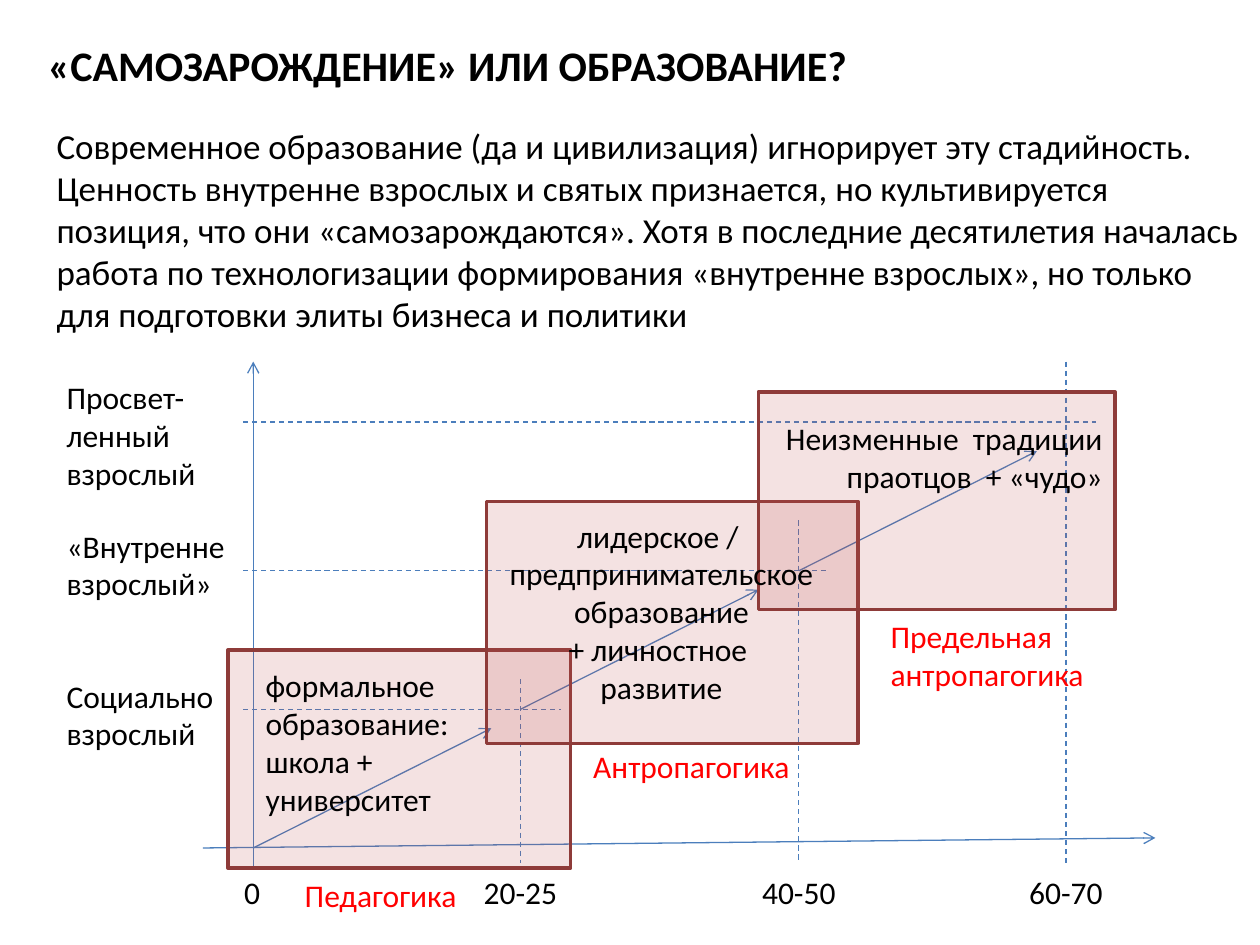
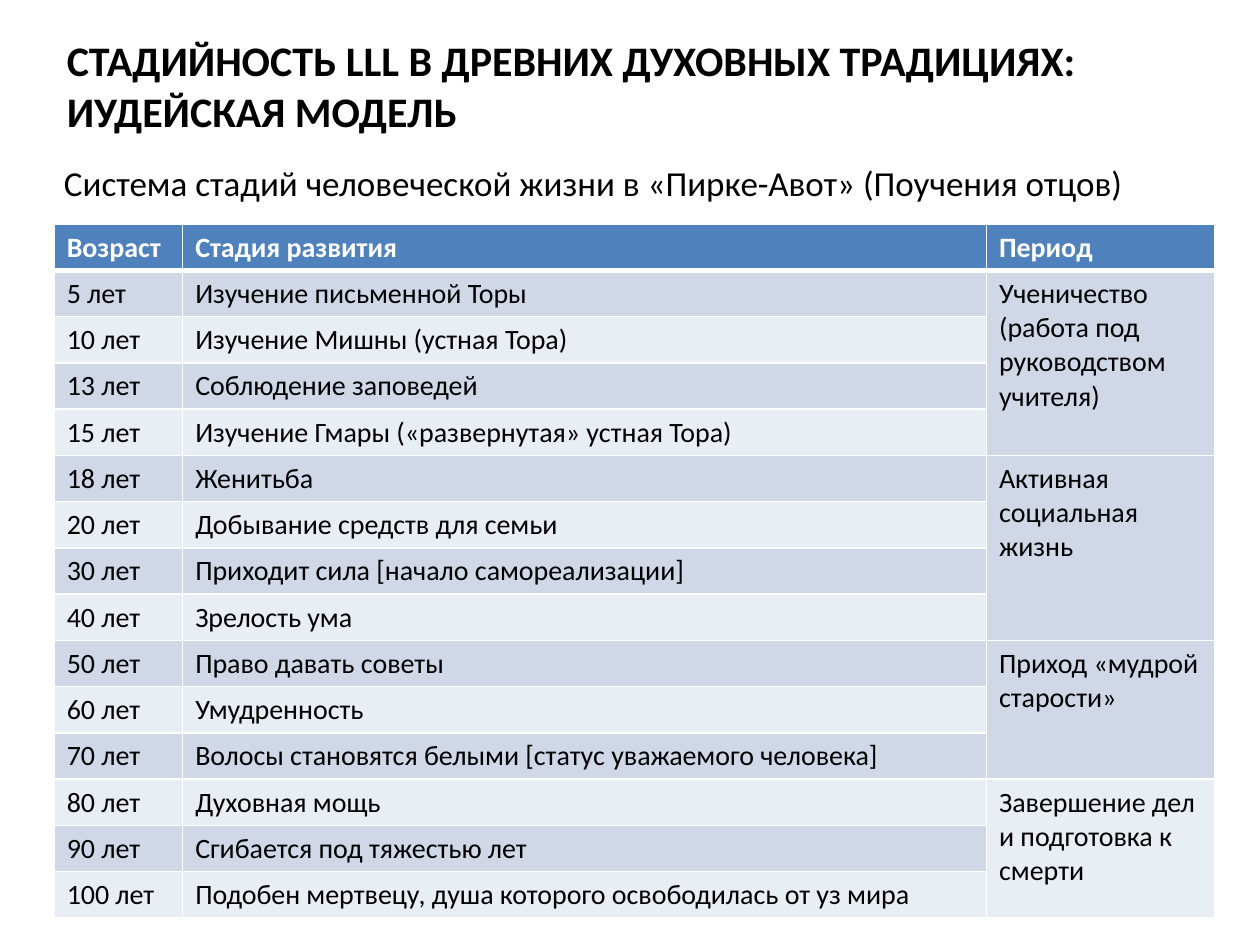
from lxml.etree import SubElement
from pptx import Presentation
from pptx.dml.color import RGBColor
from pptx.enum.dml import MSO_LINE
from pptx.enum.shapes import MSO_CONNECTOR, MSO_SHAPE
from pptx.enum.text import MSO_ANCHOR, PP_ALIGN
from pptx.oxml.ns import qn
from pptx.util import Inches, Pt

FONT = "Calibri"
BLACK, WHITE, RED = "000000", "FFFFFF", "FF0000"
LINE, ROSE, WINE = "4B7EBC", "C0504D", "8E3B39"
HEAD, BANDS = "4F81BD", ("E9EDF4", "D0D8E8")
LEFT, MID, RIGHT = PP_ALIGN.LEFT, PP_ALIGN.CENTER, PP_ALIGN.RIGHT

INTRO = (
    "Современное образование (да и цивилизация) игнорирует эту стадийность. "
    "Ценность внутренне взрослых и святых признается, но культивируется позиция, "
    "что они «самозарождаются». Хотя в последние десятилетия началась работа по "
    "технологизации формирования «внутренне взрослых», но только для подготовки "
    "элиты бизнеса и политики"
)
STAGES = [
    ("5 лет", "Изучение письменной Торы"),
    ("10 лет", "Изучение Мишны (устная Тора)"),
    ("13 лет", "Соблюдение заповедей"),
    ("15 лет", "Изучение Гмары («развернутая» устная Тора)"),
    ("18 лет", "Женитьба"),
    ("20 лет", "Добывание средств для семьи"),
    ("30 лет", "Приходит сила [начало самореализации]"),
    ("40 лет", "Зрелость ума"),
    ("50 лет", "Право давать советы"),
    ("60 лет", "Умудренность"),
    ("70 лет", "Волосы становятся белыми [статус уважаемого человека]"),
    ("80 лет", "Духовная мощь"),
    ("90 лет", "Сгибается под тяжестью лет"),
    ("100 лет", "Подобен мертвецу, душа которого освободилась от уз мира"),
]
# Each period with the number of stages it covers
PERIODS = [
    ("Ученичество (работа под руководством учителя)", 4),
    ("Активная социальная жизнь", 4),
    ("Приход «мудрой старости»", 3),
    ("Завершение дел и подготовка к смерти", 3),
]


def color(code):
    return RGBColor.from_string(code)


def write(frame, text, size, ink=BLACK, bold=False, align=LEFT):
    """Fill a text frame; each newline becomes a line break."""
    para = frame.paragraphs[0]
    para.alignment = align
    for i, part in enumerate(text.split("\n")):
        if i:
            para.add_line_break()
        run = para.add_run()
        run.text = part
        font = run.font
        font.name, font.size, font.bold = FONT, Pt(size), bold
        font.color.rgb = color(ink)


def label(slide, box, text, size=18, ink=BLACK, align=LEFT, wrap=False):
    frame = slide.shapes.add_textbox(*map(Inches, box)).text_frame
    frame.word_wrap = wrap
    write(frame, text, size, ink, align=align)


def add_slide(deck, title, box):
    slide = deck.slides.add_slide(deck.slide_layouts[5])
    head = slide.shapes.title
    head.left, head.top, head.width, head.height = map(Inches, box)
    head.text_frame.vertical_anchor = MSO_ANCHOR.MIDDLE
    write(head.text_frame, title, 24, bold=True)
    return slide


def line(slide, start, end, dash=False, arrow=False):
    link = slide.shapes.add_connector(
        MSO_CONNECTOR.STRAIGHT, *map(Inches, (*start, *end)))
    link.line.color.rgb = color(LINE)
    link.line.width = Pt(0.75)
    if dash:
        link.line.dash_style = MSO_LINE.DASH
    if arrow:
        SubElement(link.line._get_or_add_ln(), qn("a:tailEnd"), type="arrow")
    SubElement(link._element.spPr, qn("a:effectLst"))


def panel(slide, box):
    rect = slide.shapes.add_shape(MSO_SHAPE.RECTANGLE, *map(Inches, box))
    rect.shadow.inherit = False
    rect.fill.solid()
    rect.fill.fore_color.rgb = color(ROSE)
    tint = rect._element.spPr.find(qn("a:solidFill"))[0]
    SubElement(tint, qn("a:alpha"), val="16000")
    rect.line.color.rgb = color(WINE)
    rect.line.width = Pt(2)


def stairs(slide, x, y):
    """Draw the age chart with its axes crossing at x, y."""
    ages = [("20-25", 2.12), ("40-50", 4.33), ("60-70", 6.45)]
    # Height, end of the dashed line, then name with its top and size
    levels = [
        (-1.1, 2.44, "Социально\nвзрослый", -1.41, 1.38, 0.71),
        (-2.2, 4.56, "«Внутренне\nвзрослый»", -2.6, 1.47, 0.71),
        (-3.38, 6.69, "Просвет-\nленный\nвзрослый", -3.78, 1.24, 1.01),
    ]
    tops = [-1.34, -2.6, -3.86]
    line(slide, (x, y + 0.16), (x, y - 3.86), arrow=True)
    line(slide, (x - 0.4, y), (x + 7.16, y - 0.08), arrow=True)
    label(slide, (x - 0.17, y + 0.15, 0.33, 0.4), "0")
    for (age, dx), top in zip(ages, tops):
        line(slide, (x + dx, y + top), (x + dx, y + 0.12), dash=True)
        label(slide, (x + dx - 0.39, y + 0.15, 0.79, 0.4), age)
    for dy, end, name, top, wide, high in levels:
        line(slide, (x - 0.08, y + dy), (x + end, y + dy), dash=True)
        label(slide, (x - 1.58, y + top, wide, high), name)
    for dx, dy in [(0, 0), (2.12, -1.1), (4.33, -2.2)]:
        line(slide, (x + dx, y + dy), (x + dx + 1.89, y + dy - 0.95), arrow=True)

    for dx, dy, wide, high in [(-0.2, -1.57, 2.72, 1.73),
                               (1.85, -2.75, 2.95, 1.92),
                               (4.01, -3.62, 2.83, 1.73)]:
        panel(slide, (x + dx, y + dy, wide, high))
    notes = [
        (0, -1.49, 1.73, 1.31, BLACK, LEFT, False,
         "формальное \nобразование: \nшкола + \nуниверситет"),
        (1.92, -2.68, 2.64, 1.62, BLACK, MID, False,
         "лидерское / \nпредпринимательское\nобразование\n"
         "+ личностное \nразвитие"),
        (4.01, -3.45, 2.83, 0.71, BLACK, RIGHT, True,
         "Неизменные  традиции праотцов  + «чудо»"),
        (0.31, 0.17, 1.42, 0.4, RED, LEFT, False, "Педагогика"),
        (2.6, -0.85, 2.01, 0.4, RED, LEFT, True, "Антропагогика"),
        (4.96, -1.88, 1.93, 0.71, RED, LEFT, True, "Предельная антропагогика"),
    ]
    for dx, dy, wide, high, ink, align, wrap, text in notes:
        label(slide, (x + dx, y + dy, wide, high), text, 18, ink, align, wrap)


def paint(cell, fill, base=1):
    """Give a cell white borders, with the bottom one base points wide, and a fill."""
    props = cell._tc.get_or_add_tcPr()
    for side, wide in (("L", 1), ("R", 1), ("T", 1), ("B", base)):
        edge = SubElement(props, qn("a:ln" + side), w=str(Pt(wide)))
        SubElement(SubElement(edge, qn("a:solidFill")), qn("a:srgbClr"), val=WHITE)
    cell.fill.solid()
    cell.fill.fore_color.rgb = color(fill)


def grid(slide, box):
    count = len(STAGES) + 1
    table = slide.shapes.add_table(count, 3, *map(Inches, box)).table
    for col, wide in zip(table.columns, (1.02, 6.38, 1.81)):
        col.width = Inches(wide)
    for row in table.rows:
        row.height = Inches(box[3] / count)
    for cell, text in zip(table.rows[0].cells,
                          ("Возраст", "Стадия развития", "Период")):
        paint(cell, HEAD, 3)
        write(cell.text_frame, text, 16, WHITE, True)
    for i, stage in enumerate(STAGES, 1):
        for j in range(3):
            paint(table.cell(i, j), BANDS[i % 2])
        for j, text in enumerate(stage):
            write(table.cell(i, j).text_frame, text, 16)
    top = 1
    for name, span in PERIODS:
        cell = table.cell(top, 2)
        cell.merge(table.cell(top + span - 1, 2))
        write(cell.text_frame, name, 16)
        top += span


def main():
    deck = Presentation()
    deck.slide_width, deck.slide_height = Inches(10), Inches(7.5)

    slide = add_slide(deck, "«САМОЗАРОЖДЕНИЕ» ИЛИ ОБРАЗОВАНИЕ?",
                      (0.28, -0.11, 9.53, 1.25))
    stairs(slide, 2.01, 6.73)
    label(slide, (0.35, 0.94, 9.61, 1.78), INTRO, 20, wrap=True)

    slide = add_slide(
        deck, "СТАДИЙНОСТЬ LLL В ДРЕВНИХ ДУХОВНЫХ ТРАДИЦИЯХ: ИУДЕЙСКАЯ МОДЕЛЬ",
        (0.43, 0.05, 9, 1.25))
    label(slide, (0.41, 1.23, 9.5, 0.44),
          "Система стадий человеческой жизни в «Пирке-Авот» (Поучения отцов)",
          20, wrap=True)
    grid(slide, (0.43, 1.78, 9.21, 5.5))
    deck.save("out.pptx")


if __name__ == "__main__":
    main()
